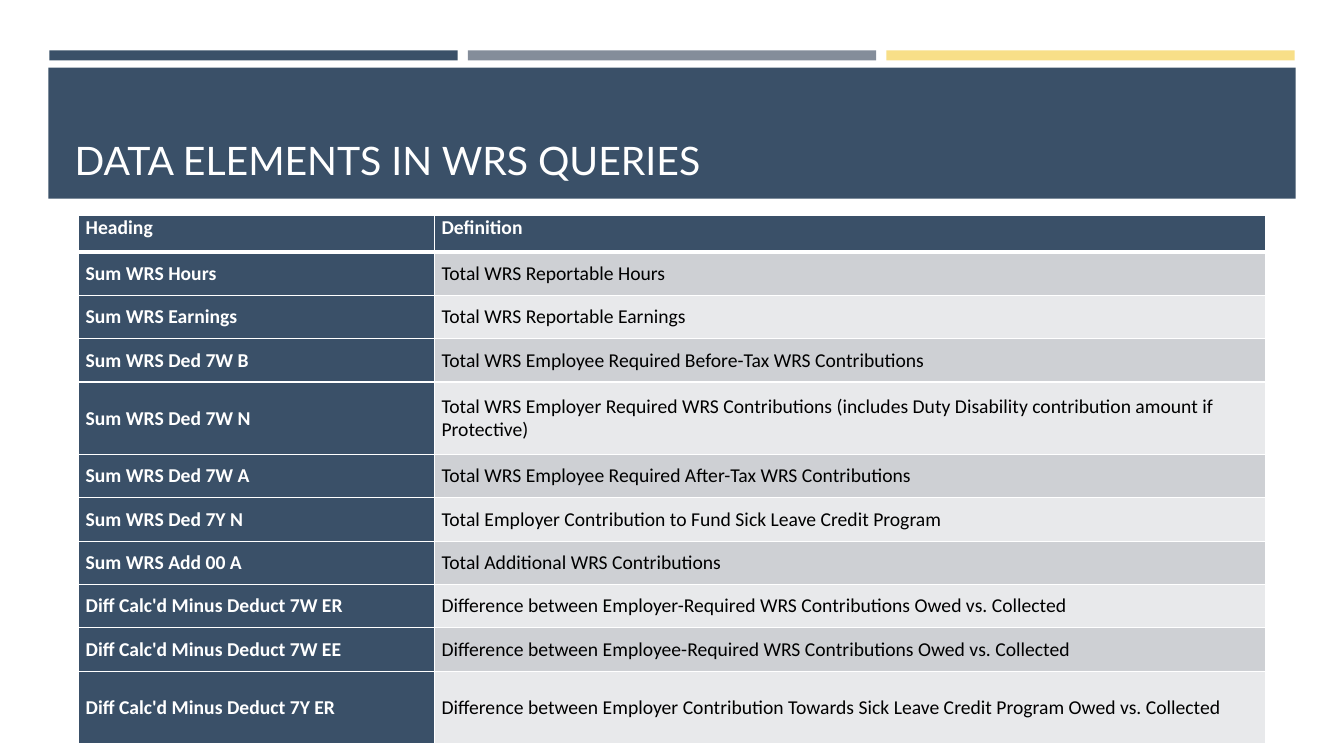
from lxml import etree
from pptx import Presentation
from pptx import util as u
from pptx.dml.color import RGBColor
from pptx.enum import shapes, text
from pptx.oxml.ns import qn

HUES = {"navy": "3A5068", "gray": "848D9A", "gold": "F8DF88",
        "white": "FFFFFF", "black": "000000", "dark": "CED0D4", "light": "E8E9EB"}

ROWS = [
    ("Heading", "Definition"),
    ("Sum WRS Hours", "Total WRS Reportable Hours"),
    ("Sum WRS Earnings", "Total WRS Reportable Earnings"),
    ("Sum WRS Ded 7W B", "Total WRS Employee Required Before-Tax WRS Contributions"),
    ("Sum WRS Ded 7W N", "Total WRS Employer Required WRS Contributions "
                         "(includes Duty Disability contribution amount if Protective)"),
    ("Sum WRS Ded 7W A", "Total WRS Employee Required After-Tax WRS Contributions"),
    ("Sum WRS Ded 7Y N", "Total Employer Contribution to Fund Sick Leave Credit Program"),
    ("Sum WRS Add 00 A", "Total Additional WRS Contributions"),
    ("Diff Calc'd Minus Deduct 7W ER",
     "Difference between Employer-Required WRS Contributions Owed vs. Collected"),
    ("Diff Calc'd Minus Deduct 7W EE",
     "Difference between Employee-Required WRS Contributions Owed vs. Collected"),
    ("Diff Calc'd Minus Deduct 7Y ER",
     "Difference between Employer Contribution Towards Sick Leave Credit Program "
     "Owed vs. Collected"),
]
TALL = (4, 10)


class Deck:
    head = "Lato"
    body = "Calibri"

    def __init__(self, slide):
        self.slide = slide

    def color(self, name):
        return RGBColor.from_string(HUES[name])

    def font(self, para, face, size, hue, bold=False):
        for run in para.runs:
            run.font.name = face
            run.font.size = u.Pt(size)
            run.font.bold = bold
            run.font.color.rgb = self.color(hue)

    def bar(self, x, y, w, h, hue):
        box = self.slide.shapes.add_shape(
            shapes.MSO_SHAPE.RECTANGLE, *map(u.Inches, (x, y, w, h)))
        box.shadow.inherit = False
        box.fill.solid()
        box.fill.fore_color.rgb = self.color(hue)
        box.line.fill.background()

    def title(self, words, x, y, w, h):
        box = self.slide.shapes.title
        box.left, box.top, box.width, box.height = map(u.Inches, (x, y, w, h))
        frame = box.text_frame
        frame.text = words
        frame.word_wrap = True
        frame.auto_size = text.MSO_AUTO_SIZE.NONE
        frame.vertical_anchor = text.MSO_ANCHOR.BOTTOM
        para = frame.paragraphs[0]
        para.alignment = text.PP_ALIGN.LEFT
        para.line_spacing = 0.9
        self.font(para, self.head, 28, "white")
        # Bring the title in front of its band
        self.slide.shapes._spTree.append(box._element)

    def edges(self, cell, top, low):
        props = cell._tc.get_or_add_tcPr()
        sides = (("L", 1), ("R", 1), ("T", top), ("B", low))
        for spot, (side, size) in enumerate(sides):
            line = etree.Element(qn("a:ln" + side), w=str(u.Pt(size)))
            fill = etree.SubElement(line, qn("a:solidFill"))
            etree.SubElement(fill, qn("a:srgbClr"), val=HUES["white"])
            props.insert(spot, line)

    def cell(self, cell, words, row, col):
        cell.text = words
        cell.margin_left = cell.margin_right = u.Inches(0.07)
        cell.margin_top = cell.margin_bottom = 0
        cell.vertical_anchor = text.MSO_ANCHOR.MIDDLE if row else text.MSO_ANCHOR.TOP
        label = row == 0 or col == 0
        self.font(cell.text_frame.paragraphs[0], self.body, 14,
                  "white" if label else "black", label)
        cell.fill.solid()
        cell.fill.fore_color.rgb = self.color(
            "navy" if label else "dark" if row % 2 else "light")
        self.edges(cell, 3 if row == 1 else 1, 3 if row == 0 else 1)

    def table(self, rows, x, y, wide, high):
        grid = self.slide.shapes.add_table(
            len(rows), len(wide),
            *map(u.Inches, (x, y, sum(wide), sum(high)))).table
        for col, size in zip(grid.columns, wide):
            col.width = u.Inches(size)
        for row, size in zip(grid.rows, high):
            row.height = u.Inches(size)
        for r, row in enumerate(rows):
            for c, words in enumerate(row):
                self.cell(grid.cell(r, c), words, r, c)


def main():
    prs = Presentation()
    prs.slide_width, prs.slide_height = u.Inches(13.33), u.Inches(7.5)
    deck = Deck(prs.slides.add_slide(prs.slide_layouts[5]))

    # Three accent strips above the title band
    for i, hue in enumerate(("navy", "gray", "gold")):
        deck.bar(0.49 + 4.15 * i, 0.5, 4.05, 0.1, hue)

    # Title band
    deck.bar(0.48, 0.67, 12.37, 1.3, "navy")
    deck.title("DATA ELEMENTS IN WRS QUERIES", 0.64, 0.77, 12.06, 1.11)

    # Table of headings and definitions
    high = [0.36] + [0.72 if r in TALL else 0.43 for r in range(1, len(ROWS))]
    deck.table(ROWS, 0.78, 2.14, (3.53, 8.24), high)
    prs.save("out.pptx")


if __name__ == "__main__":
    main()
